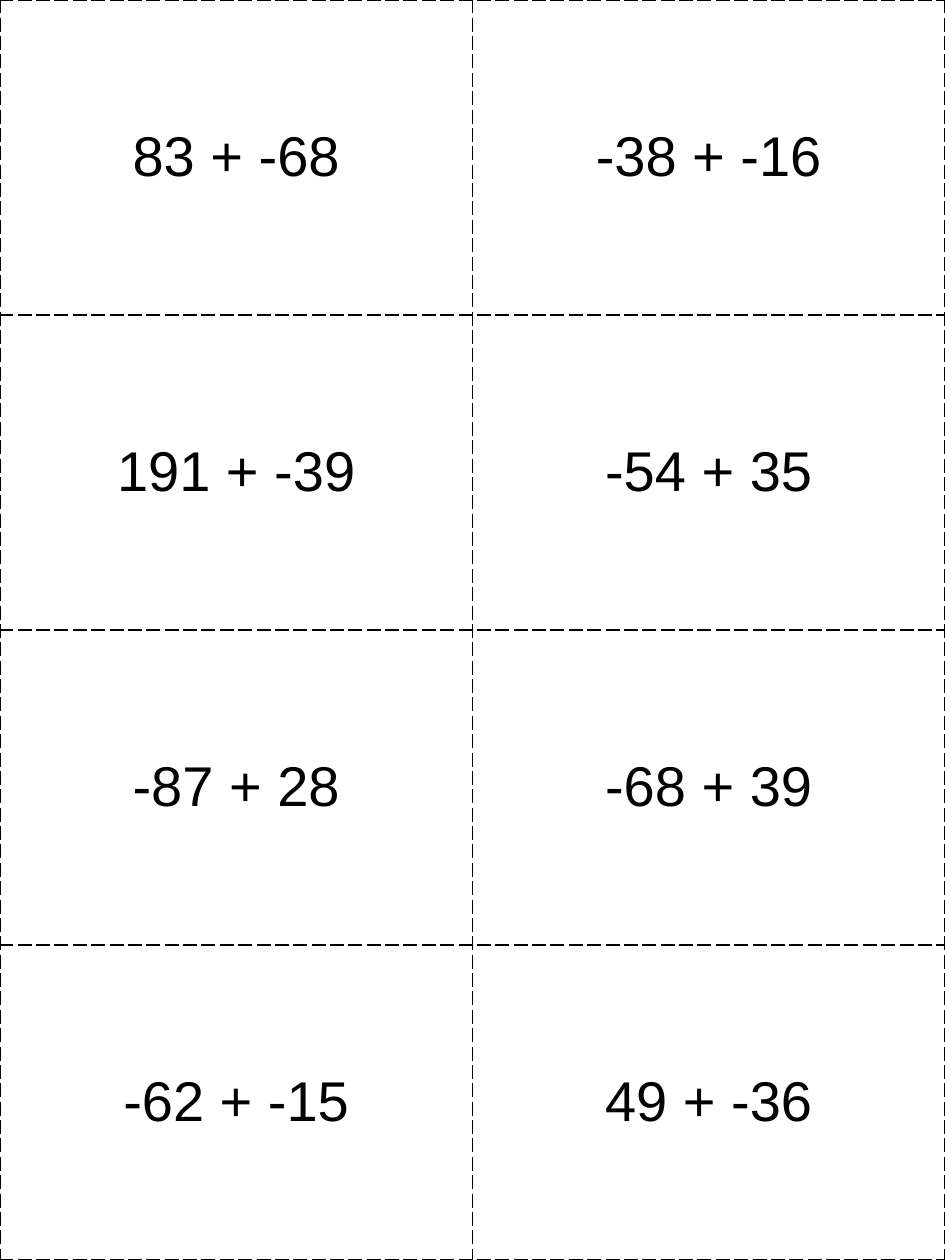
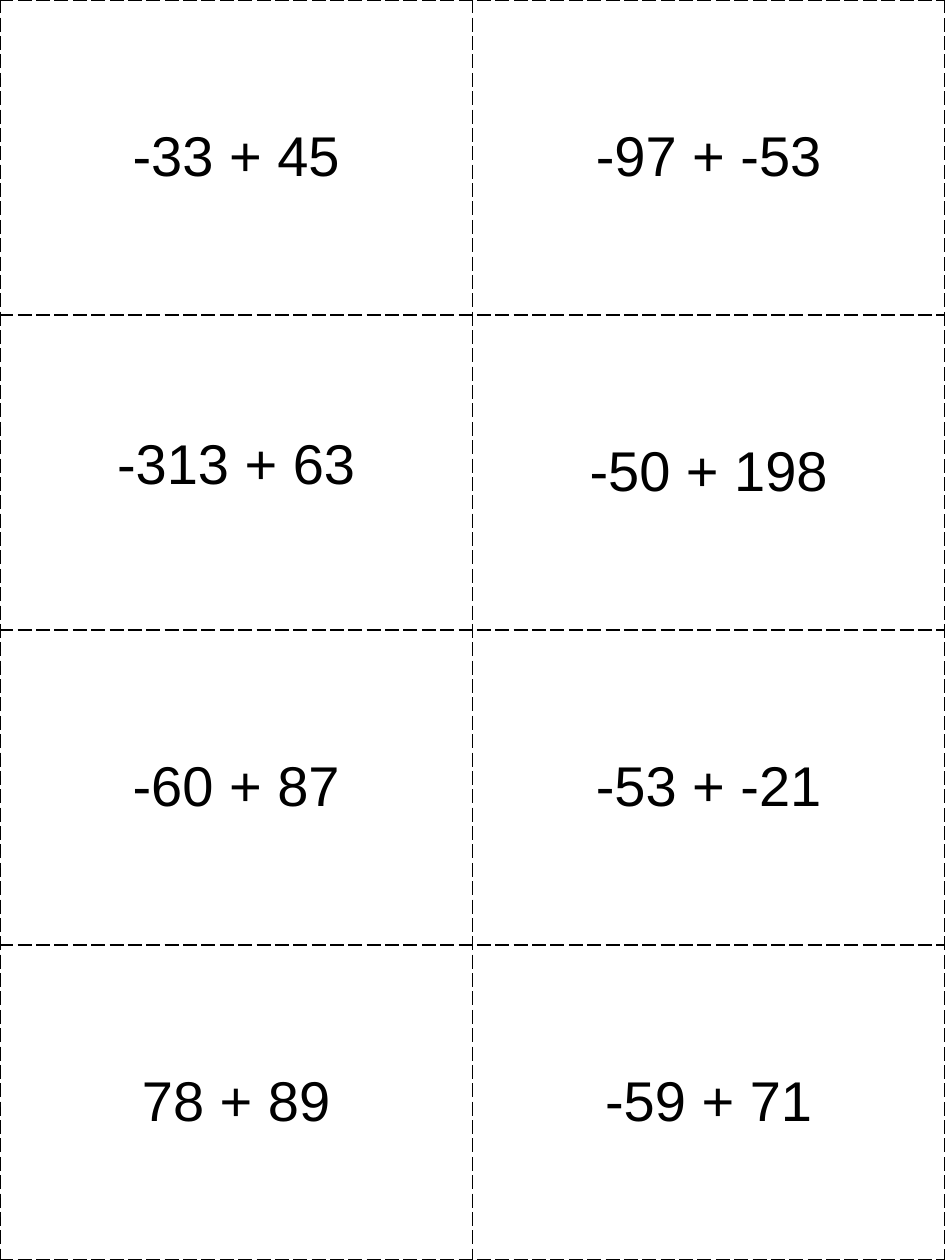
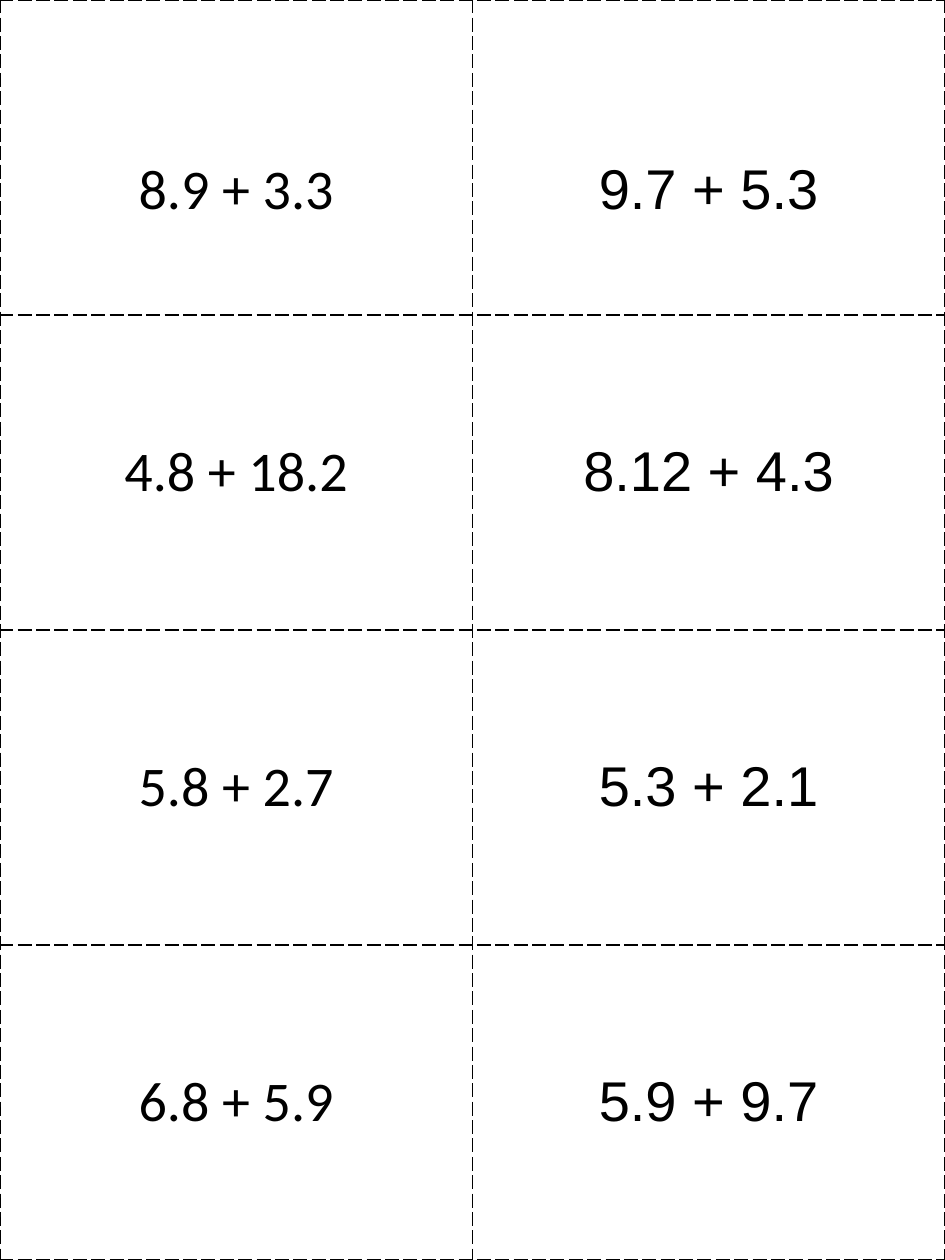
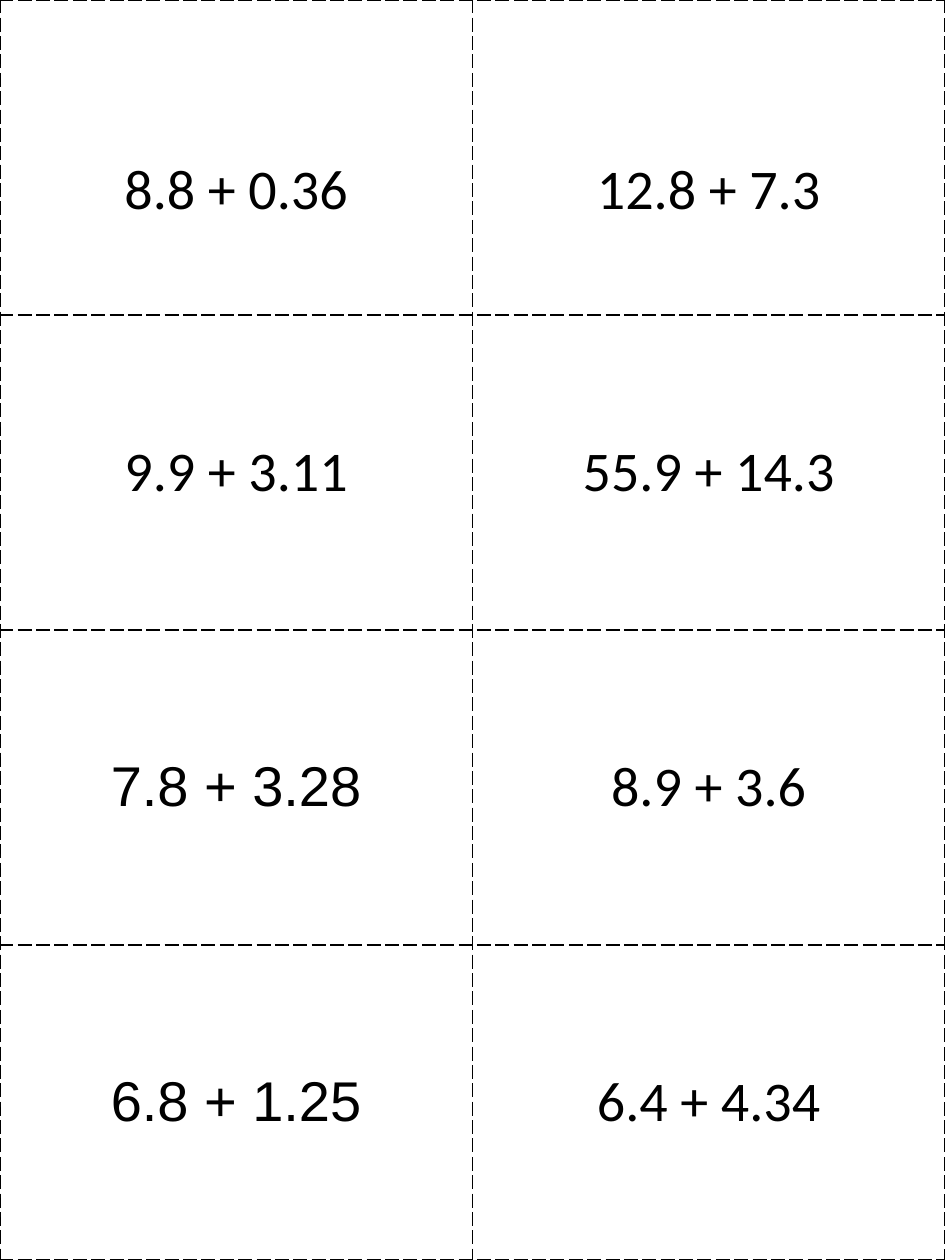
from dataclasses import dataclass

from lxml.etree import SubElement as Sub
from pptx import Presentation
from pptx.dml.color import RGBColor
from pptx.enum.text import MSO_ANCHOR as Anchor, PP_ALIGN as Align
from pptx.oxml.ns import qn
from pptx.util import Inches, Pt

INK = RGBColor(0x00, 0x00, 0x00)
WIDE, HIGH = 7.5, 10
ROWS, COLS = 4, 2
SIDE, EDGE = 0.1, 0.05
SANS, ALT = "Arial", "Calibri"
DROP, LIFT = 0.52, 0.12


@dataclass
class Sum:
    text: str
    font: str = SANS
    drop: float = 0
    lift: float = 0


SHEETS = [
    [
        Sum("83 + -68"), Sum("-38 + -16"),
        Sum("191 + -39"), Sum("-54 + 35"),
        Sum("-87 + 28"), Sum("-68 + 39"),
        Sum("-62 + -15"), Sum("49 + -36"),
    ],
    [
        Sum("-33 + 45"), Sum("-97 + -53"),
        Sum("-313 + 63", lift=LIFT), Sum("-50 + 198"),
        Sum("-60 + 87"), Sum("-53 + -21"),
        Sum("78 + 89"), Sum("-59 + 71"),
    ],
    [
        Sum("8.9 + 3.3", ALT, DROP), Sum("9.7 + 5.3", drop=DROP),
        Sum("4.8 + 18.2", ALT), Sum("8.12 + 4.3"),
        Sum("5.8 + 2.7", ALT), Sum("5.3 + 2.1"),
        Sum("6.8 + 5.9", ALT), Sum("5.9 + 9.7"),
    ],
    [
        Sum("8.8 + 0.36", ALT, DROP), Sum("12.8 + 7.3", ALT, DROP),
        Sum("9.9 + 3.11", ALT), Sum("55.9 + 14.3", ALT),
        Sum("7.8 + 3.28"), Sum("8.9 + 3.6", ALT),
        Sum("6.8 + 1.25"), Sum("6.4 + 4.34", ALT),
    ],
]


def add_cuts(cell):
    props = cell._tc.get_or_add_tcPr()
    for tag in ("a:lnL", "a:lnR", "a:lnT", "a:lnB"):
        line = Sub(props, qn(tag), w=str(Pt(1)))
        fill = Sub(line, qn("a:solidFill"))
        Sub(fill, qn("a:srgbClr"), val=str(INK))
        Sub(line, qn("a:prstDash"), val="lgDash")


def fill_card(cell, item):
    add_cuts(cell)
    cell.fill.background()
    cell.vertical_anchor = Anchor.MIDDLE
    cell.margin_left = cell.margin_right = Inches(SIDE)
    cell.margin_top = Inches(EDGE + item.drop)
    cell.margin_bottom = Inches(EDGE + item.lift)
    para = cell.text_frame.paragraphs[0]
    para.alignment = Align.CENTER
    run = para.add_run()
    run.text = item.text
    run.font.name = item.font
    run.font.size = Pt(32)
    run.font.color.rgb = INK


def add_sheet(slide, items, left, top, width, height):
    box = [Inches(size) for size in (left, top, width, height)]
    grid = slide.shapes.add_table(ROWS, COLS, *box).table
    grid.first_row = grid.horz_banding = False
    for col in grid.columns:
        col.width = Inches(width / COLS)
    for row in grid.rows:
        row.height = Inches(height / ROWS)
    for cell, item in zip(grid.iter_cells(), items):
        fill_card(cell, item)


def main():
    deck = Presentation()
    deck.slide_width, deck.slide_height = Inches(WIDE), Inches(HIGH)
    for items in SHEETS:
        slide = deck.slides.add_slide(deck.slide_layouts[6])
        add_sheet(slide, items, 0, 0, WIDE, HIGH)
    deck.save("out.pptx")


if __name__ == "__main__":
    main()
